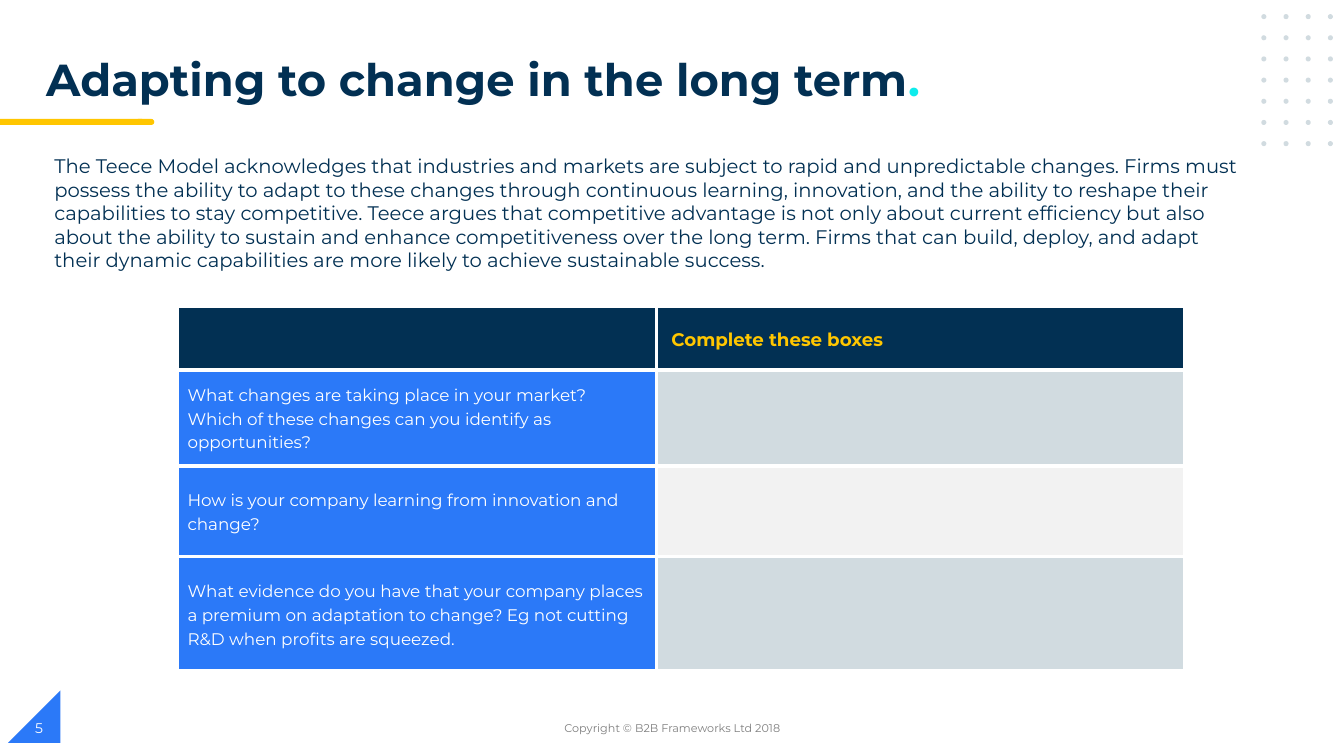
from lxml import etree
from pptx import Presentation
from pptx.dml.color import RGBColor
from pptx.enum import shapes, text
from pptx.oxml import ns
from pptx.util import Inches, Pt

NAVY, BLUE, YELLOW, CYAN = "023053", "2B79F8", "FFC600", "0EECEC"
MIST, PALE, GREY, WHITE = "D1DBE0", "F2F2F2", "7F7F7F", "FFFFFF"
FONT = "Montserrat"

TITLE = "Adapting to change in the long term"
INTRO = (
    "The Teece Model acknowledges that industries and markets are subject to rapid and "
    "unpredictable changes. Firms must possess the ability to adapt to these changes through "
    "continuous learning, innovation, and the ability to reshape their capabilities to stay "
    "competitive. Teece argues that competitive advantage is not only about current efficiency "
    "but also about the ability to sustain and enhance competitiveness over the long term. "
    "Firms that can build, deploy, and adapt their dynamic capabilities are more likely to "
    "achieve sustainable success."
)
COPYRIGHT = "Copyright © B2B Frameworks Ltd 2018"
PAGE_NUMBER = "5"

ANSWER_HEADING = "Complete these boxes"
# question, row height, fill of the answer cell
QUESTIONS = [
    ("What changes are taking place in your market? Which of these changes can you "
     "identify as opportunities?", 0.95, MIST),
    ("How is your company learning from innovation and change?", 0.9, PALE),
    ("What evidence do you have that your company places a premium on adaptation to change? "
     "Eg not cutting R&D when profits are squeezed.", 1.14, MIST),
]
HEADER_HEIGHT = 0.63
COLUMN_WIDTHS = [4.75, 5.24]
TABLE_LEFT, TABLE_TOP = 1.76, 3.04

DOT_COLUMNS, DOT_ROWS, DOT_SIZE = 4, 7, 0.05
DOT_LEFT, DOT_TOP, DOT_STEP_X, DOT_STEP_Y = 12.51, 0.14, 0.22, 0.21


def colour(value):
    return RGBColor.from_string(value)


def style(para, size, shade, bold=False, spacing=None):
    if spacing:
        para.line_spacing = spacing
    for span in para.runs:
        span.font.name, span.font.size, span.font.bold = FONT, Pt(size), bold
        span.font.color.rgb = colour(shade)


def add_shape(parent, kind, left, top, width, height, fill):
    shape = parent.add_shape(kind, *map(Inches, (left, top, width, height)))
    shape.shadow.inherit = False
    shape.fill.solid()
    shape.fill.fore_color.rgb = colour(fill)
    shape.line.fill.background()
    return shape


def add_text(left, top, width, height, words, size, shade, anchor=text.MSO_ANCHOR.TOP, **looks):
    box = page.shapes.add_textbox(*map(Inches, (left, top, width, height)))
    box.text_frame.word_wrap = True
    box.text_frame.vertical_anchor = anchor
    box.text_frame.text = words
    para = box.text_frame.paragraphs[0]
    style(para, size, shade, **looks)
    return para


def fill_cell(cell, fill, words="", size=12, shade=WHITE, bold=False, indent=0.1):
    properties = cell._tc.get_or_add_tcPr()
    for side in ("lnL", "lnR", "lnT", "lnB"):
        line = etree.SubElement(properties, ns.qn(f"a:{side}"), w=str(Pt(3)))
        solid = etree.SubElement(line, ns.qn("a:solidFill"))
        etree.SubElement(solid, ns.qn("a:srgbClr"), val=WHITE)
    cell.fill.solid()
    cell.fill.fore_color.rgb = colour(fill)
    cell.margin_left, cell.margin_right = Inches(indent), Inches(0.1)
    cell.margin_top = cell.margin_bottom = 0
    cell.vertical_anchor = text.MSO_ANCHOR.MIDDLE
    if words:
        cell.text_frame.text = words
        style(cell.text_frame.paragraphs[0], size, shade, bold, 1.15)


deck = Presentation()
deck.slide_width, deck.slide_height = Inches(13.33), Inches(7.5)
page = deck.slides.add_slide(deck.slide_layouts[6])
SHAPE = shapes.MSO_SHAPE

# Corner triangle and title underline
corner = add_shape(page.shapes, SHAPE.RIGHT_TRIANGLE, 0.08, 6.85, 0.52, 0.52, BLUE)
corner._element.spPr.find(ns.qn("a:xfrm")).set("flipH", "1")
add_shape(page.shapes, SHAPE.FLOWCHART_TERMINATOR, 1.34, 1.18, 0.19, 0.06, YELLOW)
add_shape(page.shapes, SHAPE.RECTANGLE, 0, 1.18, 1.41, 0.06, YELLOW)

# Dot grid
dots = page.shapes.add_group_shape()
for row in range(DOT_ROWS):
    for column in range(DOT_COLUMNS):
        add_shape(dots.shapes, SHAPE.OVAL, DOT_LEFT + column * DOT_STEP_X,
                  DOT_TOP + row * DOT_STEP_Y, DOT_SIZE, DOT_SIZE, MIST)

# Footer
footer = add_text(4.42, 7.02, 4.5, 0.4, COPYRIGHT, 8, GREY, text.MSO_ANCHOR.MIDDLE)
footer.alignment = text.PP_ALIGN.CENTER
add_text(0.25, 7.02, 3, 0.4, PAGE_NUMBER, 10, WHITE, text.MSO_ANCHOR.MIDDLE)

# Title and introduction
title = add_text(0.36, 0.52, 9.9, 0.6, TITLE, 32, NAVY, bold=True, spacing=0.9)
full_stop = title.add_run()
full_stop.text = "."
style(title, 32, NAVY, bold=True)
full_stop.font.color.rgb = colour(CYAN)
add_text(0.44, 1.48, 11.97, 1.28, INTRO, 14, NAVY)

# Worksheet table
heights = [HEADER_HEIGHT] + [height for _, height, _ in QUESTIONS]
frame = page.shapes.add_table(len(heights), len(COLUMN_WIDTHS), *map(
    Inches, (TABLE_LEFT, TABLE_TOP, sum(COLUMN_WIDTHS), sum(heights))))
table = frame.table
for column, width in zip(table.columns, COLUMN_WIDTHS):
    column.width = Inches(width)
for row, height in zip(table.rows, heights):
    row.height = Inches(height)
fill_cell(table.cell(0, 0), NAVY)
fill_cell(table.cell(0, 1), NAVY, ANSWER_HEADING, 13, YELLOW, True, 0.15)
for index, (question, _, answer_fill) in enumerate(QUESTIONS, 1):
    fill_cell(table.cell(index, 0), BLUE, question)
    fill_cell(table.cell(index, 1), answer_fill)

deck.save("out.pptx")
